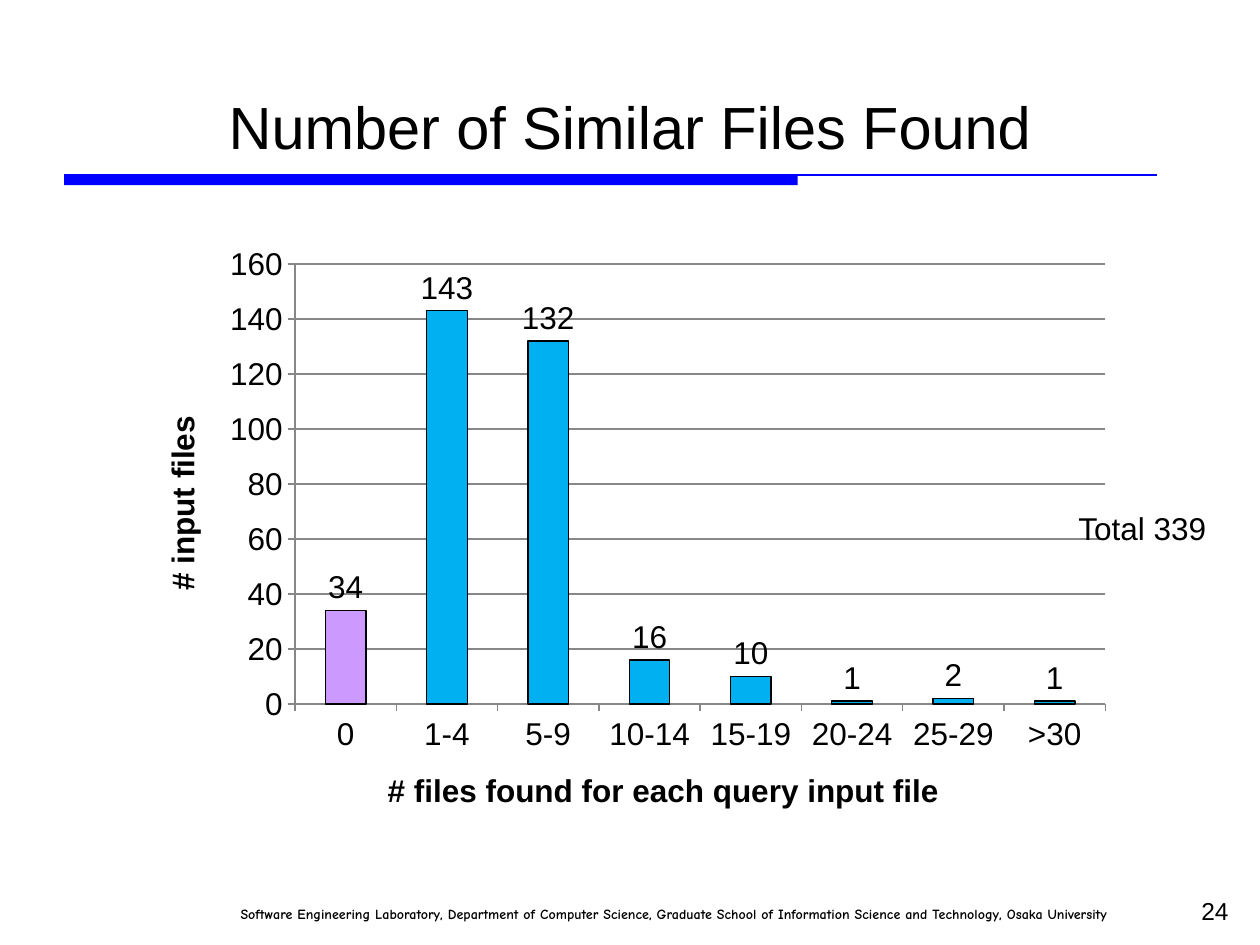
"""Build the slide showing how many similar files were found per query file."""
from lxml import etree
from pptx import Presentation
from pptx.chart import data
from pptx.dml import color
from pptx.enum import chart as charts, shapes, text
from pptx.oxml import ns
from pptx.util import Inches, Pt

COLORS = {name: color.RGBColor.from_string(value) for name, value in {
    "black": "000000", "rule": "0000FF", "bar": "00B0F0",
    "zero_bar": "CC99FF", "axis": "878787"}.items()}
ALIGN = text.PP_ALIGN


def style_font(font, size, name="Arial", bold=False):
    font.name, font.size, font.bold = name, Pt(size), bold
    font.color.rgb = COLORS["black"]


def add_text(box, words, size, align, name="Arial", bold=False, wrap=True):
    shape = slide.shapes.add_textbox(*map(Inches, box))
    frame = shape.text_frame
    frame.word_wrap = wrap
    paragraph = frame.paragraphs[0]
    paragraph.alignment = align
    run = paragraph.add_run()
    run.text = words
    style_font(run.font, size, name, bold)
    return shape


presentation = Presentation()
presentation.slide_width, presentation.slide_height = Inches(10), Inches(7.5)
slide = presentation.slides.add_slide(presentation.slide_layouts[6])

add_text((0.83, 7.14, 8.07, 0.23),
         "Software Engineering Laboratory, Department of Computer Science, "
         "Graduate School of Information Science and Technology, Osaka University",
         8, ALIGN.RIGHT, "Comic Neue", True, wrap=False)

bar = slide.shapes.add_shape(shapes.MSO_SHAPE.RECTANGLE, Inches(0.51),
                             Inches(1.39), Inches(5.82), Inches(0.08))
bar.shadow.inherit = False
bar.fill.solid()
bar.fill.fore_color.rgb = COLORS["rule"]
bar.line.fill.background()
rule = slide.shapes.add_connector(shapes.MSO_CONNECTOR.STRAIGHT, Inches(0.51),
                                  Inches(1.39), Inches(9.18), Inches(1.39))
rule.line.color.rgb = COLORS["rule"]
rule.line.width = Pt(0.75)
etree.SubElement(rule._element.spPr, ns.qn("a:effectLst"))

title = add_text((0.5, 0.6, 9, 0.79), "Number of Similar Files Found", 34, ALIGN.CENTER)
title.text_frame.vertical_anchor = text.MSO_ANCHOR.MIDDLE
add_text((7.52, 7.06, 2.33, 0.24), "24", 14, ALIGN.RIGHT)

chart_data = data.CategoryChartData()
chart_data.categories = ["0", "1-4", "5-9", "10-14", "15-19", "20-24", "25-29", ">30"]
chart_data.add_series("Series 1", [34, 143, 132, 16, 10, 1, 2, 1])
chart = slide.shapes.add_chart(charts.XL_CHART_TYPE.COLUMN_CLUSTERED, Inches(1.06),
                               Inches(1.86), Inches(7.87), Inches(4.8), chart_data).chart
chart.has_legend = False
chart.has_title = False
style_font(chart.font, 18)

for axis, words in ((chart.category_axis, "# files found for each query input file "),
                    (chart.value_axis, "# input files ")):
    axis.major_tick_mark = charts.XL_TICK_MARK.OUTSIDE
    axis.minor_tick_mark = charts.XL_TICK_MARK.NONE
    axis.format.line.color.rgb = COLORS["axis"]
    axis.format.line.width = Pt(0.75)
    run = axis.axis_title.text_frame.paragraphs[0].add_run()
    run.text = words
    style_font(run.font, 18, bold=True)

value_axis = chart.value_axis
value_axis.minimum_scale, value_axis.maximum_scale, value_axis.major_unit = 0, 160, 20
value_axis.has_major_gridlines = True
value_axis.major_gridlines.format.line.color.rgb = COLORS["axis"]
value_axis.major_gridlines.format.line.width = Pt(0.75)

plot = chart.plots[0]
plot.gap_width = 150
plot.vary_by_categories = False
plot.has_data_labels = True
plot.data_labels.show_value = True
plot.data_labels.position = charts.XL_LABEL_POSITION.OUTSIDE_END
style_font(plot.data_labels.font, 18)

series = plot.series[0]
for part, fill in ((series, "bar"), (series.points[0], "zero_bar")):
    part.format.fill.solid()
    part.format.fill.fore_color.rgb = COLORS[fill]
    part.format.line.color.rgb = COLORS["black"]
    part.format.line.width = Pt(0.75)

add_text((8.46, 3.99, 1.23, 0.4), "Total 339", 18, ALIGN.LEFT, wrap=False)

presentation.save("out.pptx")
